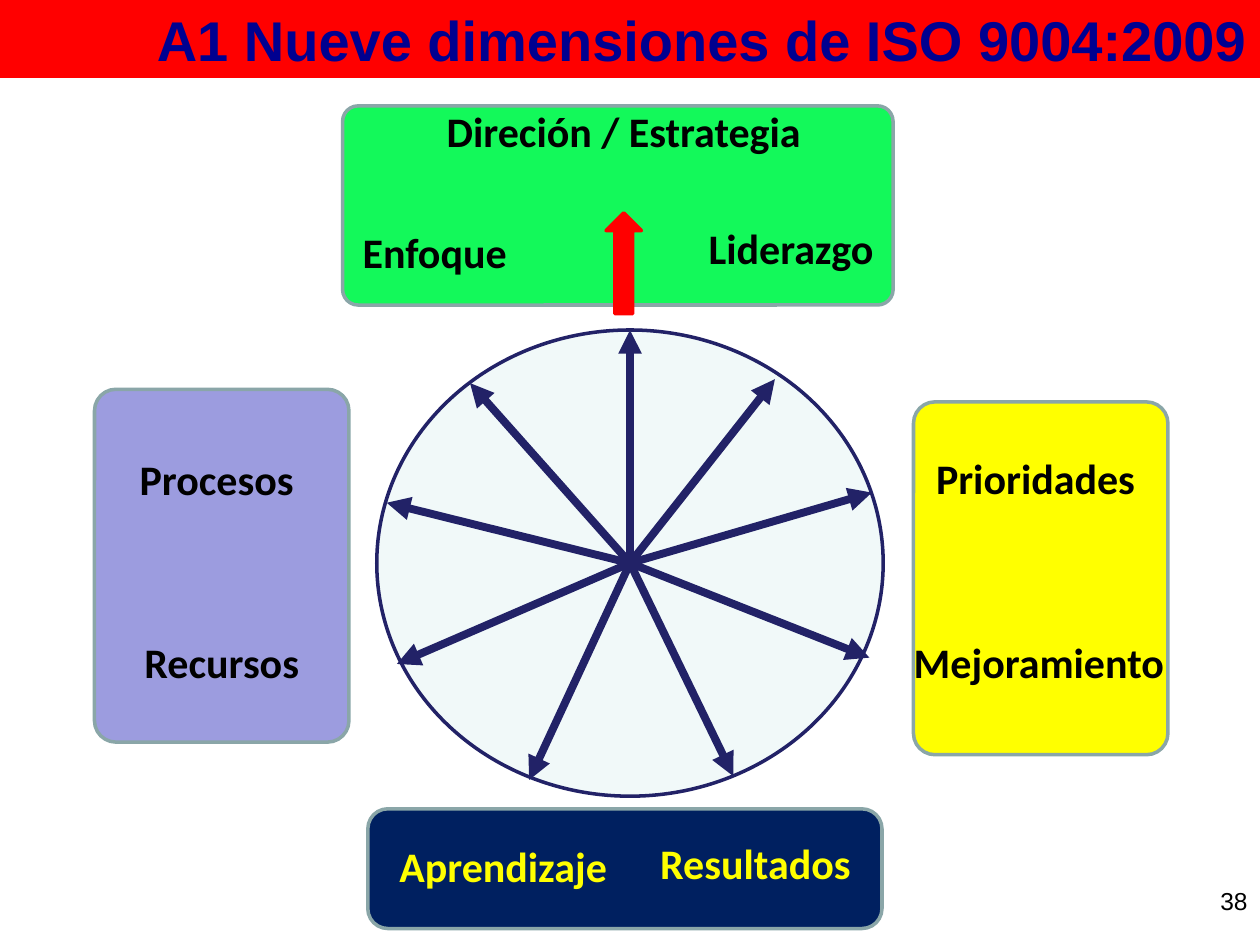
from pptx import Presentation
from pptx.dml.color import RGBColor
from pptx.enum.shapes import MSO_CONNECTOR as Connector, MSO_SHAPE as Shape
from pptx.enum.text import MSO_ANCHOR as Anchor, MSO_AUTO_SIZE as AutoSize, PP_ALIGN as Align
from pptx.oxml.ns import qn
from pptx.util import Pt
from lxml.etree import SubElement

BLACK = RGBColor(0x00, 0x00, 0x00)
RED = RGBColor(0xFF, 0x00, 0x00)
YELLOW = RGBColor(0xFF, 0xFF, 0x00)
GREEN = RGBColor(0x13, 0xF9, 0x5A)
LILAC = RGBColor(0x9C, 0x9C, 0xDF)
NAVY = RGBColor(0x00, 0x20, 0x60)
TITLE_BLUE = RGBColor(0x00, 0x00, 0x90)
WHEEL_BLUE = RGBColor(0x22, 0x22, 0x67)
WHEEL_FILL = RGBColor(0xF1, 0xF9, 0xF9)
BORDER = RGBColor(0x8A, 0xA6, 0xA8)

HUB = (360, 321.8)
RIM_POINTS = [
    (360, 188.6), (442.8, 216.7), (498.2, 281.5), (496.8, 375.8), (419, 443.5),
    (302.4, 445.7), (226.8, 379.4), (221, 287.3), (268.6, 218.9),
]
PANELS = [
    ((522, 229.7, 145.4, 201.6), YELLOW, 0.084),
    ((54, 222.5, 145.4, 201.6), LILAC, 0.084),
    ((195.8, 60.5, 314.6, 113.8), GREEN, 0.078),
    ((210.2, 462.2, 293.8, 68.4), NAVY, 0.167),
]
LABELS = [
    ("Direción / Estrategia", 247, 56.9, 218.9, BLACK),
    ("Enfoque", 199.4, 126, 98, BLACK),
    ("Liderazgo", 397.4, 123.8, 109.4, BLACK),
    ("Resultados", 369.4, 475.2, 124.6, YELLOW),
    ("Aprendizaje", 220.3, 476.6, 134.6, YELLOW),
    ("Recursos", 74.9, 360, 103.7, BLACK),
    ("Procesos", 72, 255.6, 103.7, BLACK),
    ("Mejoramiento", 514.1, 360, 159.1, BLACK),
    ("Prioridades", 527, 254.9, 129.6, BLACK),
]


def points(values):
    return [Pt(value) for value in values]


def write_text(frame, text, *, size, color, font="Calibri", bold=True, align=Align.CENTER):
    para = frame.paragraphs[0]
    para.alignment = align
    span = para.add_run()
    span.text = text
    span.font.name = font
    span.font.size = Pt(size)
    span.font.bold = bold
    span.font.color.rgb = color


def add_figure(page, kind, place, fill, line=None):
    figure = page.shapes.add_shape(kind, *points(place))
    figure.shadow.inherit = False
    figure.fill.solid()
    figure.fill.fore_color.rgb = fill
    if line is None:
        figure.line.fill.background()
    else:
        figure.line.color.rgb = line
        figure.line.width = Pt(2)
    return figure


def add_panel(page, place, fill, rounding):
    panel = add_figure(page, Shape.ROUNDED_RECTANGLE, place, fill, BORDER)
    panel.adjustments[0] = rounding


def add_label(page, text, left, top, width, color):
    box = page.shapes.add_textbox(*points((left, top, width, 36)))
    box.text_frame.word_wrap = False
    box.text_frame.auto_size = AutoSize.SHAPE_TO_FIT_TEXT
    write_text(box.text_frame, text, size=24, color=color)


def add_title(page, text):
    banner = add_figure(page, Shape.RECTANGLE, (0, 0, 720, 44.6), RED)
    banner.text_frame.word_wrap = True
    banner.text_frame.vertical_anchor = Anchor.MIDDLE
    write_text(banner.text_frame, text, size=32, color=TITLE_BLUE, font="Arial", align=Align.RIGHT)


def add_spoke(page, rim_point):
    spoke = page.shapes.add_connector(Connector.STRAIGHT, *points(HUB + rim_point))
    spoke.line.color.rgb = WHEEL_BLUE
    spoke.line.width = Pt(4.5)
    SubElement(spoke.line._get_or_add_ln(), qn("a:tailEnd"), type="triangle")
    SubElement(spoke._element.spPr, qn("a:effectLst"))


def add_page_number(page, text):
    box = page.shapes.add_textbox(*points((552.2, 502.6, 167.8, 37.4)))
    box.text_frame.word_wrap = True
    write_text(box.text_frame, text, size=14, color=BLACK, font="Arial", bold=False, align=Align.RIGHT)


def main():
    deck = Presentation()
    deck.slide_width, deck.slide_height = Pt(720), Pt(540)
    page = deck.slides.add_slide(deck.slide_layouts[6])
    for panel in PANELS:
        add_panel(page, *panel)
    add_figure(page, Shape.UP_ARROW, (346.3, 121.7, 20.2, 57.6), RED, RED)
    for label in LABELS:
        add_label(page, *label)
    add_title(page, "A1 Nueve dimensiones de ISO 9004:2009")
    add_figure(page, Shape.OVAL, (215.3, 188.6, 289.4, 266.4), WHEEL_FILL, WHEEL_BLUE)
    for rim_point in RIM_POINTS:
        add_spoke(page, rim_point)
    add_page_number(page, "38")
    deck.save("out.pptx")


if __name__ == "__main__":
    main()
